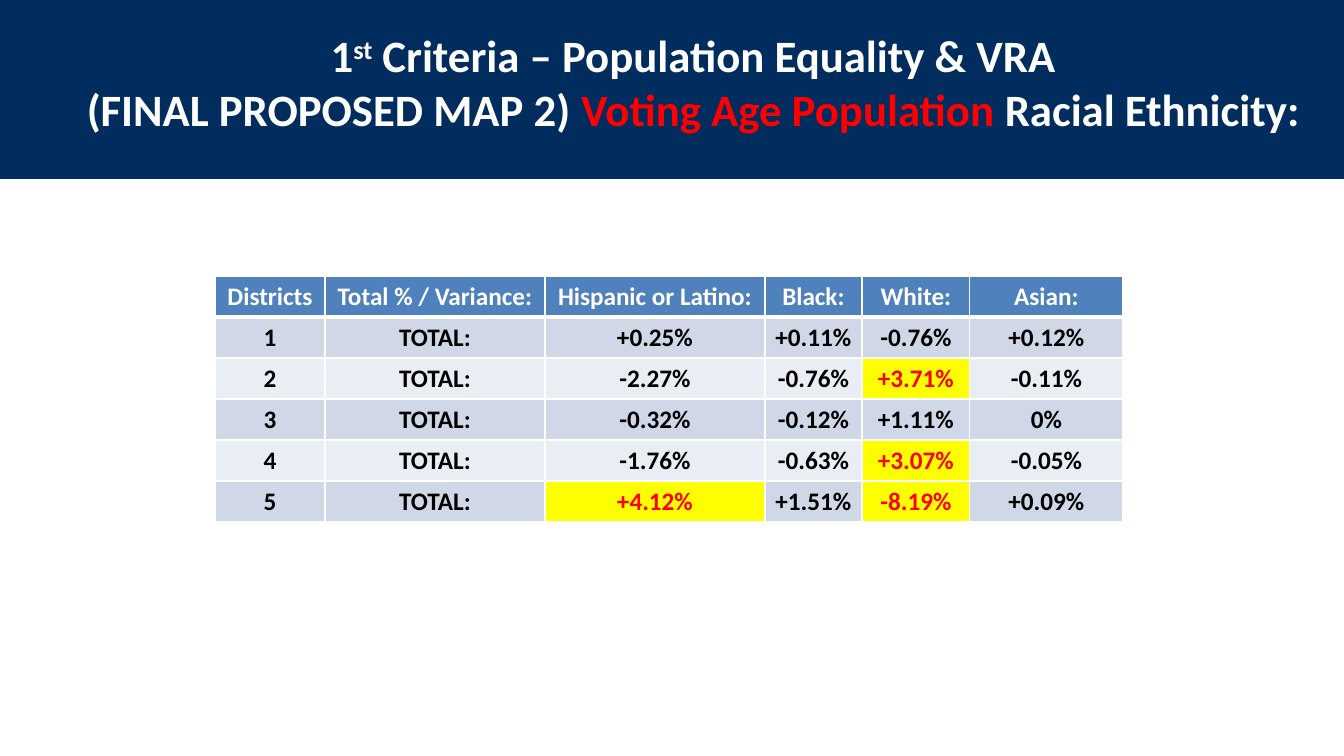
from lxml.etree import SubElement
from pptx import Presentation
from pptx.dml.color import RGBColor
from pptx.enum.shapes import MSO_SHAPE
from pptx.enum.text import MSO_ANCHOR, MSO_AUTO_SIZE, PP_ALIGN
from pptx.oxml.ns import qn
from pptx.util import Emu, Pt

EMU_PER_PX = 914400 / 100.8
FONT = "Calibri"
WHITE = RGBColor(0xFF, 0xFF, 0xFF)
BLACK = RGBColor(0x00, 0x00, 0x00)
NAVY = RGBColor(0x00, 0x2D, 0x5D)
RED = RGBColor(0xFF, 0x00, 0x00)
YELLOW = RGBColor(0xFF, 0xFF, 0x00)
HEADER_BLUE = RGBColor(0x4F, 0x81, 0xBD)
ROW_FILLS = (RGBColor(0xD0, 0xD8, 0xE8), RGBColor(0xE9, 0xED, 0xF4))

TITLE_LINES = [
    [("1", WHITE, False), ("st", WHITE, True),
     (" Criteria – Population Equality & VRA", WHITE, False)],
    [("(FINAL PROPOSED MAP 2) ", WHITE, False),
     ("Voting Age Population ", RED, False),
     ("Racial Ethnicity:", WHITE, False)],
]
HEADINGS = ["Districts", "Total % / Variance:", "Hispanic or Latino:",
            "Black:", "White:", "Asian:"]
VARIANCES = [
    ["+0.25%", "+0.11%", "-0.76%", "+0.12%"],
    ["-2.27%", "-0.76%", "+3.71%", "-0.11%"],
    ["-0.32%", "-0.12%", "+1.11%", "0%"],
    ["-1.76%", "-0.63%", "+3.07%", "-0.05%"],
    ["+4.12%", "+1.51%", "-8.19%", "+0.09%"],
]
COLUMN_WIDTHS = [110, 220, 220, 97, 108, 153]
ROW_HEIGHT = 41
HIGHLIGHT_LIMIT = 3


def px(length):
    return Emu(round(length * EMU_PER_PX))


def add_span(para, text, size, color):
    para.alignment = PP_ALIGN.CENTER
    span = para.add_run()
    span.text = text
    span.font.name = FONT
    span.font.size = Pt(size)
    span.font.bold = True
    span.font.color.rgb = color
    return span


def set_borders(cell, top, bottom):
    properties = cell._tc.get_or_add_tcPr()
    for side, width in (("L", 1), ("R", 1), ("T", top), ("B", bottom)):
        line = SubElement(properties, qn(f"a:ln{side}"), w=str(Pt(width)))
        fill = SubElement(line, qn("a:solidFill"))
        SubElement(fill, qn("a:srgbClr"), val=str(WHITE))


def add_title_band(page, left, top, width, height):
    band = page.shapes.add_shape(
        MSO_SHAPE.RECTANGLE, px(left), px(top), px(width), px(height))
    band.shadow.inherit = False
    band.fill.solid()
    band.fill.fore_color.rgb = NAVY
    band.line.fill.background()

    title = page.shapes.title
    title.element.addprevious(band.element)
    title.left, title.top = px(left + 7), px(top + 26)
    title.width, title.height = px(width - 21), px(194)
    frame = title.text_frame
    frame.word_wrap = True
    frame.auto_size = MSO_AUTO_SIZE.NONE
    frame.vertical_anchor = MSO_ANCHOR.TOP
    frame.margin_left = px(60)
    for index, line in enumerate(TITLE_LINES):
        para = frame.add_paragraph() if index else frame.paragraphs[0]
        for text, color, raised in line:
            span = add_span(para, text, 32, color)
            if raised:
                span._r.get_or_add_rPr().set("baseline", "30000")


def add_variance_table(page, left, top):
    rows = [HEADINGS] + [[str(district), "TOTAL:", *values]
                         for district, values in enumerate(VARIANCES, 1)]
    table = page.shapes.add_table(
        len(rows), len(HEADINGS), px(left), px(top),
        px(sum(COLUMN_WIDTHS)), px(ROW_HEIGHT * len(rows))).table
    for column, width in zip(table.columns, COLUMN_WIDTHS):
        column.width = px(width)
    for row_index, texts in enumerate(rows):
        table.rows[row_index].height = px(ROW_HEIGHT)
        for column_index, text in enumerate(texts):
            cell = table.cell(row_index, column_index)
            cell.margin_left = cell.margin_right = px(5)
            if row_index == 0:
                fill, color = HEADER_BLUE, WHITE
            elif text.endswith("%") and abs(float(text[:-1])) > HIGHLIGHT_LIMIT:
                fill, color = YELLOW, RED
            else:
                fill, color = ROW_FILLS[(row_index - 1) % 2], BLACK
            set_borders(cell, top=3 if row_index == 1 else 1,
                        bottom=3 if row_index == 0 else 1)
            cell.fill.solid()
            cell.fill.fore_color.rgb = fill
            add_span(cell.text_frame.paragraphs[0], text, 18, color)


def main():
    deck = Presentation()
    deck.slide_width, deck.slide_height = px(1344), px(756)
    page = deck.slides.add_slide(deck.slide_layouts[5])
    add_title_band(page, 0, -3, 1344, 182)
    add_variance_table(page, 215, 276)
    deck.save("out.pptx")


if __name__ == "__main__":
    main()
